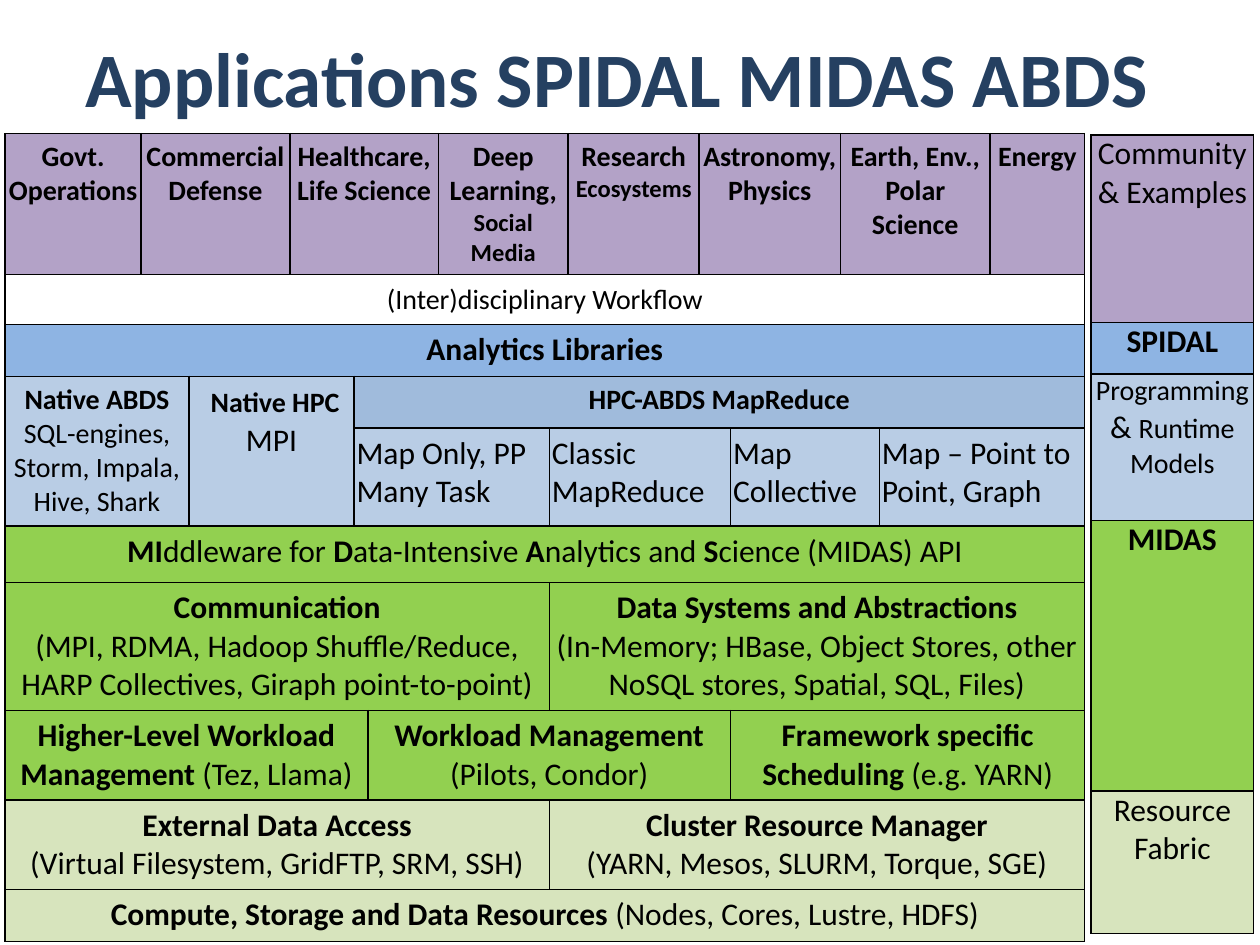
from dataclasses import dataclass

from lxml.etree import SubElement, Element
from pptx import Presentation
from pptx.dml.color import RGBColor
from pptx.enum.text import MSO_ANCHOR as Anchor, PP_ALIGN as Align
from pptx.oxml.ns import qn
from pptx.util import Inches, Pt


@dataclass(frozen=True)
class Theme:
    font: str = "Calibri"
    text: str = "000000"
    title: str = "254061"
    white: str = "FFFFFF"
    purple: str = "B3A2C7"
    blue: str = "8EB4E3"
    mid_blue: str = "A0BBDC"
    pale_blue: str = "B9CDE5"
    green: str = "92D050"
    pale_green: str = "D7E4BD"
    title_size: int = 44
    large: int = 18
    medium: int = 16
    small: int = 14
    border: float = 1


T = Theme()


@dataclass(frozen=True)
class Run:
    text: str
    size: int = T.large
    bold: bool = False


@dataclass(frozen=True)
class Block:
    """A table cell: paragraphs (lists of runs), fill and spans."""
    paragraphs: list
    fill: str
    cols: int = 1
    rows: int = 1
    align: Align = Align.CENTER
    anchor: Anchor = Anchor.TOP


def plain(text, size=T.large):
    return [Run(text, size)]


def bold(text, size=T.large):
    return [Run(text, size, True)]


def write_paragraph(p, runs, align, color=T.text):
    p.alignment = align
    p.font.name = T.font
    p.font.color.rgb = RGBColor.from_string(color)
    uniform = len({(run.size, run.bold) for run in runs}) == 1
    for run in runs:
        head, *rest = run.text.split("\n")
        parts = [head, *rest]
        for i, part in enumerate(parts):
            if i:
                p.add_line_break()
            r = p.add_run()
            r.text = part
            font = p.font if uniform else r.font
            font.size, font.bold = Pt(run.size), run.bold


def write_text(tf, paragraphs, align, color=T.text):
    for i, runs in enumerate(paragraphs):
        p = tf.add_paragraph() if i else tf.paragraphs[0]
        write_paragraph(p, runs, align, color)


def set_borders(cell):
    props = cell._tc.get_or_add_tcPr()
    for i, side in enumerate(("lnL", "lnR", "lnT", "lnB")):
        line = Element(qn(f"a:{side}"), w=str(Pt(T.border)))
        fill = SubElement(line, qn("a:solidFill"))
        SubElement(fill, qn("a:srgbClr"), val=T.text)
        props.insert(i, line)


def style_cell(cell, block, inset_x, inset_y):
    cell.margin_left = cell.margin_right = Inches(inset_x)
    cell.margin_top = cell.margin_bottom = Inches(inset_y)
    cell.vertical_anchor = block.anchor
    cell.fill.solid()
    cell.fill.fore_color.rgb = RGBColor.from_string(block.fill)
    set_borders(cell)


def add_block_table(s, left, top, widths, heights, layout, inset_x, inset_y):
    """Fill the grid row by row; each block takes the next free cell."""
    table = s.shapes.add_table(
        len(heights), len(widths), Inches(left), Inches(top),
        Inches(sum(widths)), Inches(sum(heights))).table
    table.first_row = table.horz_banding = False
    for column, width in zip(table.columns, widths):
        column.width = Inches(width)
    for row, height in zip(table.rows, heights):
        row.height = Inches(height)
    taken = set()
    for y, blocks in enumerate(layout):
        for block in blocks:
            x = next(c for c in range(len(widths)) if (y, c) not in taken)
            area = [(y + dy, x + dx) for dy in range(block.rows) for dx in range(block.cols)]
            taken.update(area)
            for position in area:
                style_cell(table.cell(*position), block, inset_x, inset_y)
            cell = table.cell(y, x)
            if len(area) > 1:
                cell.merge(table.cell(*area[-1]))
            write_text(cell.text_frame, block.paragraphs, block.align)


def add_title(s, text):
    tf = s.shapes.add_textbox(Inches(0.4), Inches(-0.02), Inches(9), Inches(1.25)).text_frame
    tf.word_wrap = True
    tf.vertical_anchor = Anchor.MIDDLE
    write_text(tf, [bold(text, T.title_size)], Align.CENTER, T.title)


def community(*lines, cols=1):
    return Block([bold(line, T.medium) for line in lines], T.purple, cols)


def map_model(*lines, cols):
    return Block([plain(line) for line in lines], T.pale_blue, cols, align=Align.LEFT)


def service(name, detail, fill, cols):
    return Block([bold(name), plain(detail)], fill, cols)


def inline_service(name, detail, fill, cols):
    return Block([bold(name + " ") + plain(detail)], fill, cols)


def stack_layout():
    every = 14
    half = every // 2
    acronym = [("MI", "ddleware for "), ("D", "ata-Intensive "),
               ("A", "nalytics and "), ("S", "cience (MIDAS) API")]
    midas = [run for initial, rest in acronym for run in bold(initial) + plain(rest)]
    return [
        [community("Govt. Operations"),
         community("Commercial", "Defense", cols=2),
         community("Healthcare,", "Life Science", cols=3),
         Block([bold("Deep Learning,", T.medium), bold("Social Media", T.small)], T.purple, 2),
         Block([bold("Research ", T.medium) + bold("Ecosystems", T.small)], T.purple),
         community("Astronomy, ", "Physics", cols=2),
         community("Earth, Env., Polar Science", cols=2),
         community("Energy")],
        [Block([plain("(Inter)disciplinary Workflow", T.medium)], T.white, every,
               anchor=Anchor.MIDDLE)],
        [Block([bold("Analytics Libraries")], T.blue, every)],
        [Block([bold("Native ABDS", T.medium),
                plain("SQL-engines, Storm, Impala, Hive, Shark", T.medium)],
               T.pale_blue, 2, 2),
         Block([plain(" ") + bold("Native HPC", T.medium), plain("MPI")], T.pale_blue, 2, 2),
         Block([bold("HPC-ABDS MapReduce", T.medium)], T.mid_blue, 10)],
        [map_model("Map Only, PP", "Many Task", cols=3),
         map_model("Classic MapReduce", cols=3),
         map_model("Map \nCollective", cols=2),
         map_model("Map – Point to Point, Graph", cols=2)],
        [Block([midas], T.green, every)],
        [service("Communication", "(MPI, RDMA, Hadoop Shuffle/Reduce, "
                 "HARP Collectives, Giraph point-to-point)", T.green, half),
         service("Data Systems and Abstractions", "(In-Memory; HBase, Object Stores, other "
                 "NoSQL stores, Spatial, SQL, Files)", T.green, half)],
        [inline_service("Higher-Level Workload Management", "(Tez, Llama)", T.green, 5),
         service("Workload Management", "(Pilots, Condor)", T.green, 5),
         inline_service("Framework specific Scheduling", "(e.g. YARN)", T.green, 4)],
        [service("External Data Access", "(Virtual Filesystem, GridFTP, SRM, SSH)",
                 T.pale_green, half),
         service("Cluster Resource Manager", "(YARN, Mesos, SLURM, Torque, SGE)",
                 T.pale_green, half)],
        [inline_service("Compute, Storage and Data Resources",
                        "(Nodes, Cores, Lustre, HDFS)", T.pale_green, every)],
    ]


def layer_layout():
    models = plain("Programming ", T.medium) + plain("& ") + plain("Runtime Models", T.medium)
    layers = [(plain("Community & Examples"), T.purple), (bold("SPIDAL"), T.blue),
              (models, T.pale_blue), (bold("MIDAS"), T.green),
              (plain("Resource Fabric"), T.pale_green)]
    return [[Block([runs], fill)] for runs, fill in layers]


def main():
    prs = Presentation()
    prs.slide_width, prs.slide_height = Inches(10), Inches(7.5)
    s = prs.slides.add_slide(prs.slide_layouts[6])
    stack_widths = [1.08, 0.38, 0.8, 0.51, 0.11, 0.56, 0.88,
                    0.15, 1.04, 0.25, 0.87, 0.31, 0.88, 0.75]
    stack_heights = [0.95, 0.4, 0.41, 0.41, 0.76, 0.45, 1, 0.7, 0.7, 0.41]
    add_block_table(s, 0.04, 1.06, stack_widths, stack_heights, stack_layout(), 0.02, 0.05)
    add_block_table(s, 8.66, 1.07, [1.29], [1.49, 0.41, 1.16, 2.15, 1.13],
                    layer_layout(), 0.03, 0)
    add_title(s, "Applications SPIDAL MIDAS ABDS")
    prs.save("out.pptx")


if __name__ == "__main__":
    main()
